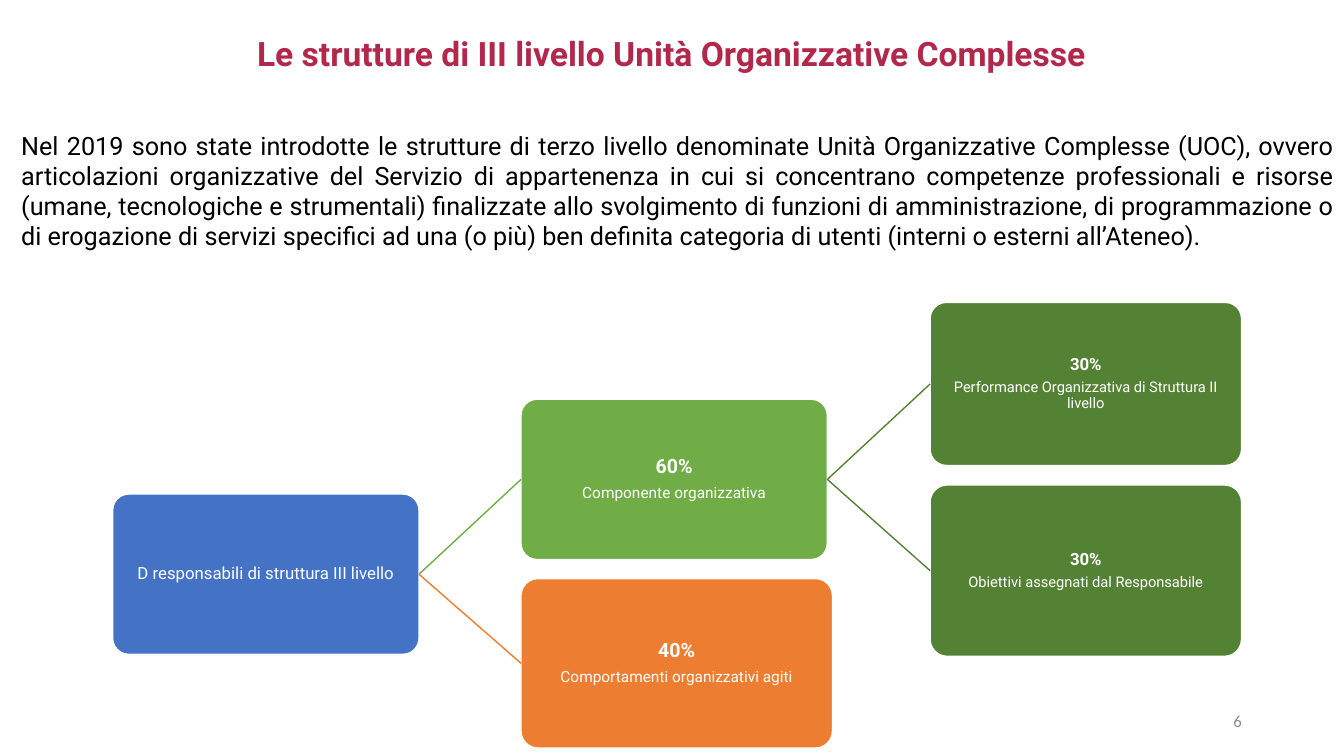
import pptx
import pptx.util
import pptx.dml.color
import pptx.enum.shapes
import pptx.enum.text
import pptx.oxml.ns
import lxml.etree

Cm, Pt = pptx.util.Cm, pptx.util.Pt
ALIGN = pptx.enum.text.PP_ALIGN
MID = pptx.enum.text.MSO_ANCHOR.MIDDLE
TOP = pptx.enum.text.MSO_ANCHOR.TOP

BLUE, LIME, GREEN, ORANGE = "4472C4", "70AD47", "548235", "ED7D31"
WHITE = "FFFFFF"
INTRO = (
    "Nel 2019 sono state introdotte le strutture di terzo livello denominate "
    "Unità Organizzative Complesse (UOC), ovvero articolazioni organizzative "
    "del Servizio di appartenenza in cui si concentrano competenze "
    "professionali e risorse (umane, tecnologiche e strumentali) finalizzate "
    "allo svolgimento di funzioni di amministrazione, di programmazione o di "
    "erogazione di servizi specifici ad una (o più) ben definita categoria di "
    "utenti (interni o esterni all’Ateneo)."
)


def color(code):
    return pptx.dml.color.RGBColor.from_string(code)


def write(par, text, size=12, tint=WHITE, bold=False, face="Roboto",
          align=ALIGN.CENTER, lead=1.0, after=0):
    par.alignment = align
    par.line_spacing = lead
    par.space_before = Pt(0)
    par.space_after = Pt(after)
    run = par.add_run()
    run.text = text
    font = run.font
    font.name, font.size, font.bold = face, Pt(size), bold
    font.color.rgb = color(tint)


def place(shape, left, top, width, height):
    shape.left, shape.top = Cm(left), Cm(top)
    shape.width, shape.height = Cm(width), Cm(height)


def setup(frame, anchor, wrap=True):
    frame.auto_size = pptx.enum.text.MSO_AUTO_SIZE.NONE
    frame.word_wrap = wrap
    frame.vertical_anchor = anchor


def plain(par):
    """Turn a list paragraph into running text."""
    props = par._p.get_or_add_pPr()
    props.set("marL", "0")
    props.set("indent", "0")
    lxml.etree.SubElement(props, pptx.oxml.ns.qn("a:buNone"))


def card(slide, left, top, width, height, fill, label, size, share=None, big=12):
    kind = pptx.enum.shapes.MSO_SHAPE.ROUNDED_RECTANGLE
    box = slide.shapes.add_shape(kind, Cm(left), Cm(top), Cm(width), Cm(height))
    box.adjustments[0] = 0.1
    box.shadow.inherit = False
    box.fill.solid()
    box.fill.fore_color.rgb = color(fill)
    box.line.color.rgb = color(WHITE)
    box.line.width = Pt(1)
    frame = box.text_frame
    setup(frame, MID)
    frame.margin_left = frame.margin_right = Cm(0.15)
    frame.margin_top = frame.margin_bottom = Cm(0.15)
    par = frame.paragraphs[0]
    if share:
        write(par, share, size=big, bold=True, lead=0.9, after=big * 0.35)
        par = frame.add_paragraph()
    write(par, label, size=size, lead=0.9, after=size * 0.35)
    return box


def join(slide, start, end, tint):
    kind = pptx.enum.shapes.MSO_CONNECTOR.STRAIGHT
    link = slide.shapes.add_connector(kind, 0, 0, 0, 0)
    link.begin_connect(start, 3)
    link.end_connect(end, 1)
    link.line.color.rgb = color(tint)
    link.line.width = Pt(1)
    props = link._element.spPr
    lxml.etree.SubElement(props, pptx.oxml.ns.qn("a:effectLst"))


def main():
    deck = pptx.Presentation()
    deck.slide_width, deck.slide_height = Cm(33.87), Cm(19.05)
    slide = deck.slides.add_slide(deck.slide_layouts[1])

    # Title and introduction
    title, body = slide.placeholders
    place(title, 6.1, 0.71, 21.64, 1.27)
    setup(title.text_frame, TOP, wrap=False)
    write(title.text_frame.paragraphs[0],
          "Le strutture di III livello Unità Organizzative Complesse",
          size=24, tint="B2284B", bold=True)
    place(body, 0.28, 3.15, 33.6, 3.33)
    setup(body.text_frame, TOP)
    par = body.text_frame.paragraphs[0]
    plain(par)
    write(par, INTRO, size=18, tint="000000", align=ALIGN.JUSTIFY)

    # Tree of components
    root = card(slide, 2.84, 12.45, 7.72, 4.04, BLUE,
                "D responsabili di struttura III livello", 12)
    group = card(slide, 13.13, 10.06, 7.72, 4.04, LIME,
                 "Componente organizzativa", 11, "60%", 14)
    unit = card(slide, 23.44, 7.62, 7.85, 4.11, GREEN,
                "Performance Organizzativa di Struttura II livello", 10.5, "30%")
    goals = card(slide, 23.44, 12.22, 7.85, 4.32, GREEN,
                 "Obiettivi assegnati dal Responsabile", 10.5, "30%")
    acts = card(slide, 13.13, 14.58, 7.85, 4.27, ORANGE,
                "Comportamenti organizzativi agiti", 11, "40%", 14)

    # Branches
    for start, end, tint in ((root, group, LIME), (root, acts, ORANGE),
                             (group, unit, GREEN), (group, goals, GREEN)):
        join(slide, start, end, tint)

    # Page number
    page = slide.shapes.add_textbox(Cm(23.93), Cm(17.65), Cm(7.62), Cm(1.02))
    setup(page.text_frame, MID)
    write(page.text_frame.paragraphs[0], "6", tint="8C8C8C", face="Calibri",
          align=ALIGN.RIGHT)

    deck.save("out.pptx")


if __name__ == "__main__":
    main()
